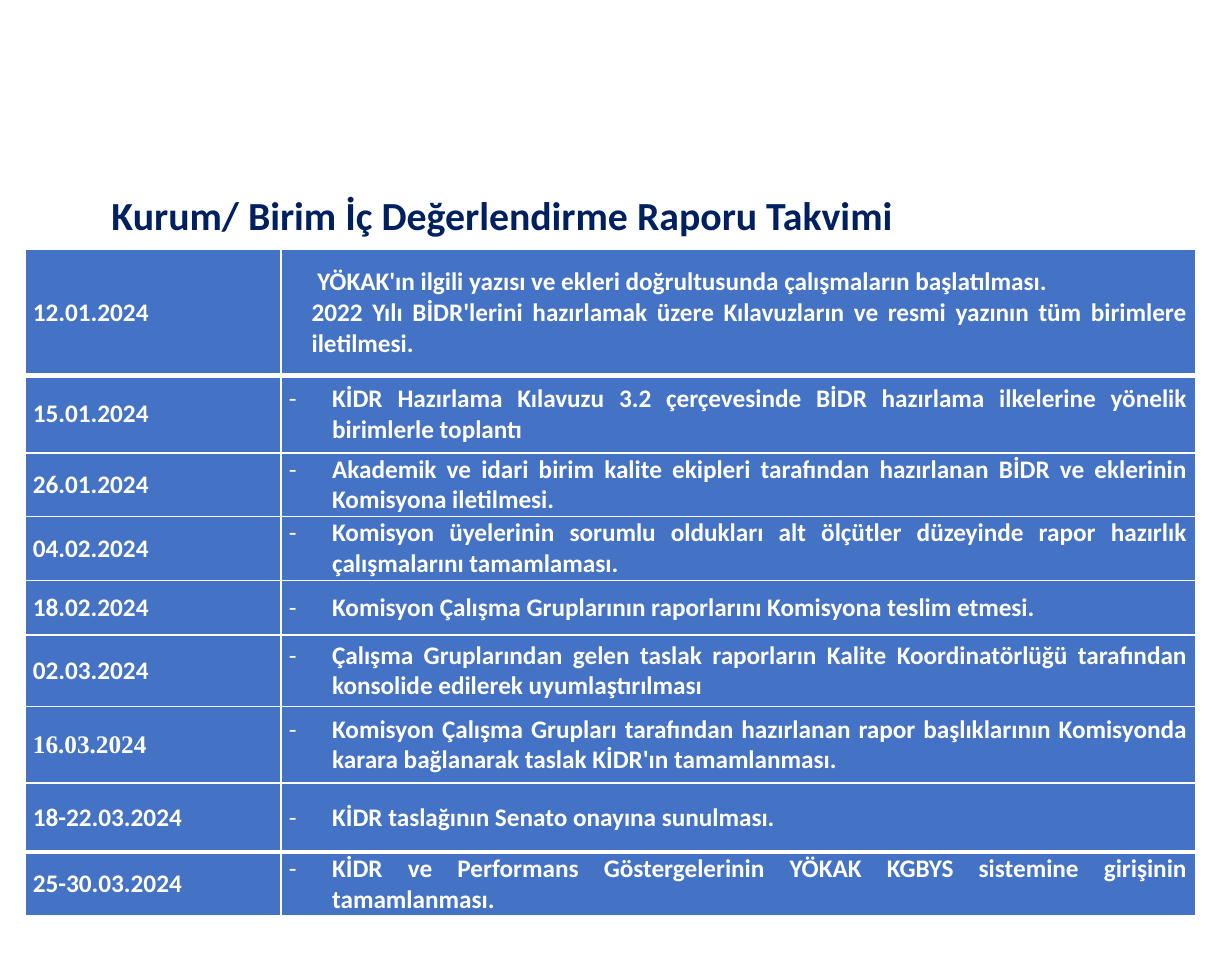
from lxml import etree
from pptx import Presentation
from pptx.dml.color import RGBColor
from pptx.enum.text import MSO_ANCHOR, PP_ALIGN
from pptx.oxml.ns import qn
from pptx.util import Pt

LEFT, JUSTIFY = PP_ALIGN.LEFT, PP_ALIGN.JUSTIFY
MIDDLE, TOP = MSO_ANCHOR.MIDDLE, MSO_ANCHOR.TOP

# Content: date, tasks, row height in px
HEADING = "Kurum/ Birim İç Değerlendirme Raporu Takvimi"
CALENDAR = [
    ("12.01.2024", ["YÖKAK'ın ilgili yazısı ve ekleri doğrultusunda çalışmaların başlatılması.",
                    "2022 Yılı BİDR'lerini hazırlamak üzere Kılavuzların ve resmi yazının tüm birimlere iletilmesi."], 111),
    ("15.01.2024", ["KİDR Hazırlama Kılavuzu 3.2 çerçevesinde BİDR hazırlama ilkelerine yönelik birimlerle toplantı"], 68),
    ("26.01.2024", ["Akademik ve idari birim kalite ekipleri tarafından hazırlanan BİDR ve eklerinin Komisyona iletilmesi."], 56),
    ("04.02.2024", ["Komisyon üyelerinin sorumlu oldukları alt ölçütler düzeyinde rapor hazırlık çalışmalarını tamamlaması."], 56),
    ("18.02.2024", ["Komisyon Çalışma Gruplarının raporlarını Komisyona teslim etmesi."], 48),
    ("02.03.2024", ["Çalışma Gruplarından gelen taslak raporların Kalite Koordinatörlüğü tarafından konsolide edilerek uyumlaştırılması"], 63),
    ("16.03.2024", ["Komisyon Çalışma Grupları tarafından hazırlanan rapor başlıklarının Komisyonda karara bağlanarak taslak KİDR'ın tamamlanması."], 67),
    ("18-22.03.2024", ["KİDR taslağının Senato onayına sunulması."], 61),
    ("25-30.03.2024", ["KİDR ve Performans Göstergelerinin YÖKAK KGBYS sistemine girişinin tamamlanması."], 56),
]
SERIF_DATE = "16.03.2024"
COLUMN_WIDTHS = (225, 804)
FONT, SERIF = "Calibri", "Times New Roman"
WHITE, NAVY, BLUE = "FFFFFF", "002060", "4472C4"


def px(length):
    return length * 9144  # 100 px to the inch


def color(hex_code):
    return RGBColor.from_string(hex_code)


def add_run(paragraph, text, size, hex_code, font_name=FONT):
    run = paragraph.add_run()
    run.text = text
    run.font.size, run.font.bold, run.font.name = Pt(size), True, font_name
    run.font.color.rgb = color(hex_code)


def indent(paragraph, left, first):
    properties = paragraph._p.get_or_add_pPr()
    properties.set("marL", str(px(left)))
    properties.set("indent", str(px(first)))
    return properties


def add_dash(paragraph):
    properties = indent(paragraph, 38, -38)
    etree.SubElement(properties, qn("a:buFont")).set("typeface", FONT)
    etree.SubElement(properties, qn("a:buChar")).set("char", "-")


def style_cell(cell, top_width, bottom_width):
    cell.vertical_anchor = MIDDLE
    cell.margin_left = cell.margin_right = px(7)
    cell.margin_top = cell.margin_bottom = 0
    borders = {"a:lnL": 1, "a:lnR": 1, "a:lnT": top_width, "a:lnB": bottom_width}
    for tag, width in borders.items():
        border = etree.SubElement(cell._tc.get_or_add_tcPr(), qn(tag), w=str(Pt(width)))
        fill = etree.SubElement(border, qn("a:solidFill"))
        etree.SubElement(fill, qn("a:srgbClr")).set("val", WHITE)
    cell.fill.solid()
    cell.fill.fore_color.rgb = color(BLUE)


prs = Presentation()
prs.slide_width, prs.slide_height = px(1083), px(847)
slide = prs.slides.add_slide(prs.slide_layouts[5])

# Calendar table
heights = [height for _, _, height in CALENDAR]
calendar = slide.shapes.add_table(len(CALENDAR), len(COLUMN_WIDTHS), px(22), px(219),
                                  px(sum(COLUMN_WIDTHS)), px(sum(heights))).table
calendar.first_row = calendar.horz_banding = False
for column, width in zip(calendar.columns, COLUMN_WIDTHS):
    column.width = px(width)

last = len(CALENDAR) - 1
for index, (date, tasks, height) in enumerate(CALENDAR):
    calendar.rows[index].height = px(height)
    date_cell, task_cell = calendar.cell(index, 0), calendar.cell(index, 1)
    for cell in (date_cell, task_cell):
        style_cell(cell, 3 if index in (1, last) else 1, 3 if index in (0, last - 1) else 1)

    add_run(date_cell.text_frame.paragraphs[0], date, 16, WHITE,
            SERIF if date == SERIF_DATE else FONT)

    frame = task_cell.text_frame
    for number, task in enumerate(tasks):
        paragraph = frame.add_paragraph() if number else frame.paragraphs[0]
        paragraph.alignment = JUSTIFY
        if len(tasks) == 1:
            add_dash(paragraph)
        else:
            indent(paragraph, 20, 0 if number else 5)
        add_run(paragraph, task, 16, WHITE)

# Title
title = slide.shapes.title
title.left, title.top, title.width, title.height = px(88), px(172), px(963), px(72)
title_frame = title.text_frame
title_frame.word_wrap = True
title_frame.vertical_anchor = TOP
title_frame.margin_top = 0
heading = title_frame.paragraphs[0]
heading.alignment = LEFT
heading.line_spacing = 0.9
add_run(heading, HEADING, 25.2, NAVY)

prs.save("out.pptx")
